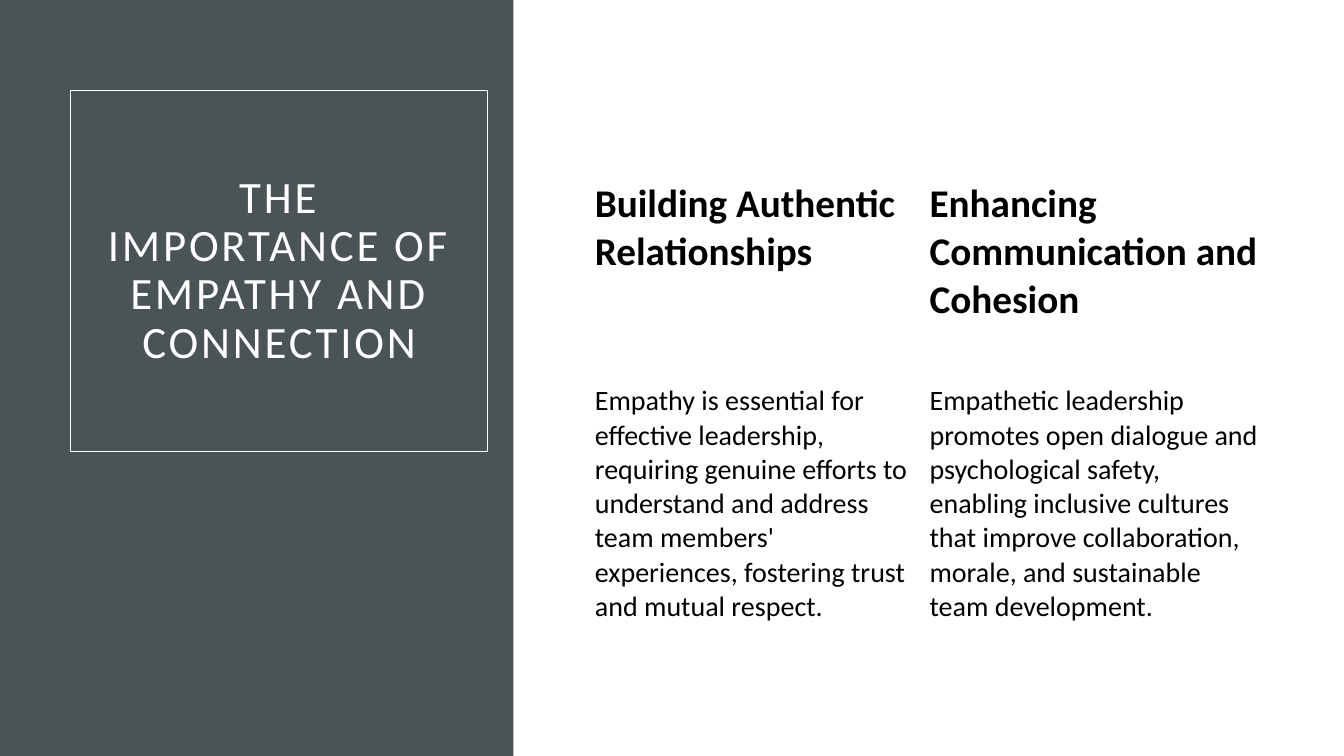
from pptx import Presentation
from pptx.dml.color import RGBColor
from pptx.enum.shapes import MSO_SHAPE
from pptx.enum.text import MSO_ANCHOR, MSO_AUTO_SIZE, PP_ALIGN
from pptx.util import Inches, Pt

COLORS = {"panel": "4A5356", "light": "FFFFFF", "text": "000000"}
FONT = "Calibri"
WIDTH, HEIGHT = 13.33, 7.5
PANEL_SHARE = 0.382  # share of the slide's width

TOPICS = [
    ("Building Authentic Relationships",
     "Empathy is essential for effective leadership, requiring genuine efforts to "
     "understand and address team members' experiences, fostering trust and mutual respect."),
    ("Enhancing Communication and Cohesion",
     "Empathetic leadership promotes open dialogue and psychological safety, enabling "
     "inclusive cultures that improve collaboration, morale, and sustainable team development."),
]


class SlideBuilder:
    """Holds the style and the current slide; lengths are shares of the slide."""

    def __init__(self, prs):
        self.prs = prs
        self.slide = prs.slides.add_slide(prs.slide_layouts[5])

    def x(self, share):
        return int(self.prs.slide_width * share)

    def y(self, share):
        return int(self.prs.slide_height * share)

    def color(self, name):
        return RGBColor.from_string(COLORS[name])

    def style(self, paragraph, size, color, bold=False):
        font = paragraph.font
        font.name, font.size, font.bold = FONT, Pt(size), bold
        font.color.rgb = self.color(color)

    def panel(self, width):
        panel = self.slide.shapes.add_shape(
            MSO_SHAPE.RECTANGLE, 0, 0, self.x(width), self.y(1))
        panel.shadow.inherit = False
        panel.fill.solid()
        panel.fill.fore_color.rgb = self.color("panel")
        panel.line.fill.background()
        # Place the panel behind the title
        self.slide.shapes.title._element.addprevious(panel._element)

    def title(self, text, left, top, width, height):
        title = self.slide.shapes.title
        title.left, title.top = self.x(left), self.y(top)
        title.width, title.height = self.x(width), self.y(height)
        title.line.color.rgb = self.color("light")
        title.line.width = Pt(0.75)
        frame = title.text_frame
        frame.text = text
        frame.word_wrap = True
        frame.auto_size = MSO_AUTO_SIZE.NONE
        frame.vertical_anchor = MSO_ANCHOR.MIDDLE
        frame.margin_left = frame.margin_right = Inches(0.3)
        frame.margin_top = frame.margin_bottom = Inches(0.2)
        heading = frame.paragraphs[0]
        heading.alignment = PP_ALIGN.CENTER
        heading.line_spacing = 0.9
        heading.space_after = Pt(6)
        self.style(heading, 32, "light")
        # Letter spacing of 2 pt
        heading.runs[0].font._element.set("spc", "200")

    def table(self, topics, left, top, columns, rows):
        table = self.slide.shapes.add_table(
            len(rows), len(columns), self.x(left), self.y(top),
            self.x(sum(columns)), self.y(sum(rows))).table
        table.first_row = table.horz_banding = False
        for row, share in zip(table.rows, rows):
            row.height = self.y(share)
        for c, (topic, share) in enumerate(zip(topics, columns)):
            table.columns[c].width = self.x(share)
            for r, text in enumerate(topic):
                cell = table.cell(r, c)
                cell.fill.background()
                cell.margin_left = cell.margin_right = Inches(0.11)
                cell.text = text
                is_heading = r == 0
                self.style(cell.text_frame.paragraphs[0],
                           28 if is_heading else 20, "text", is_heading)


def main():
    prs = Presentation()
    prs.slide_width, prs.slide_height = Inches(WIDTH), Inches(HEIGHT)
    builder = SlideBuilder(prs)

    # Dark side panel with the framed title
    builder.panel(PANEL_SHARE)
    builder.title("THE IMPORTANCE OF EMPATHY AND CONNECTION",
                  0.7 / WIDTH, 0.9 / HEIGHT, 4.14 / WIDTH, 3.58 / HEIGHT)

    # One column per topic: heading above, explanation below
    builder.table(TOPICS, 5.79 / WIDTH, 1.74 / HEIGHT,
                  columns=[3.32 / WIDTH, 3.51 / WIDTH],
                  rows=[2.02 / HEIGHT, 2.4 / HEIGHT])
    prs.save("out.pptx")


if __name__ == "__main__":
    main()
